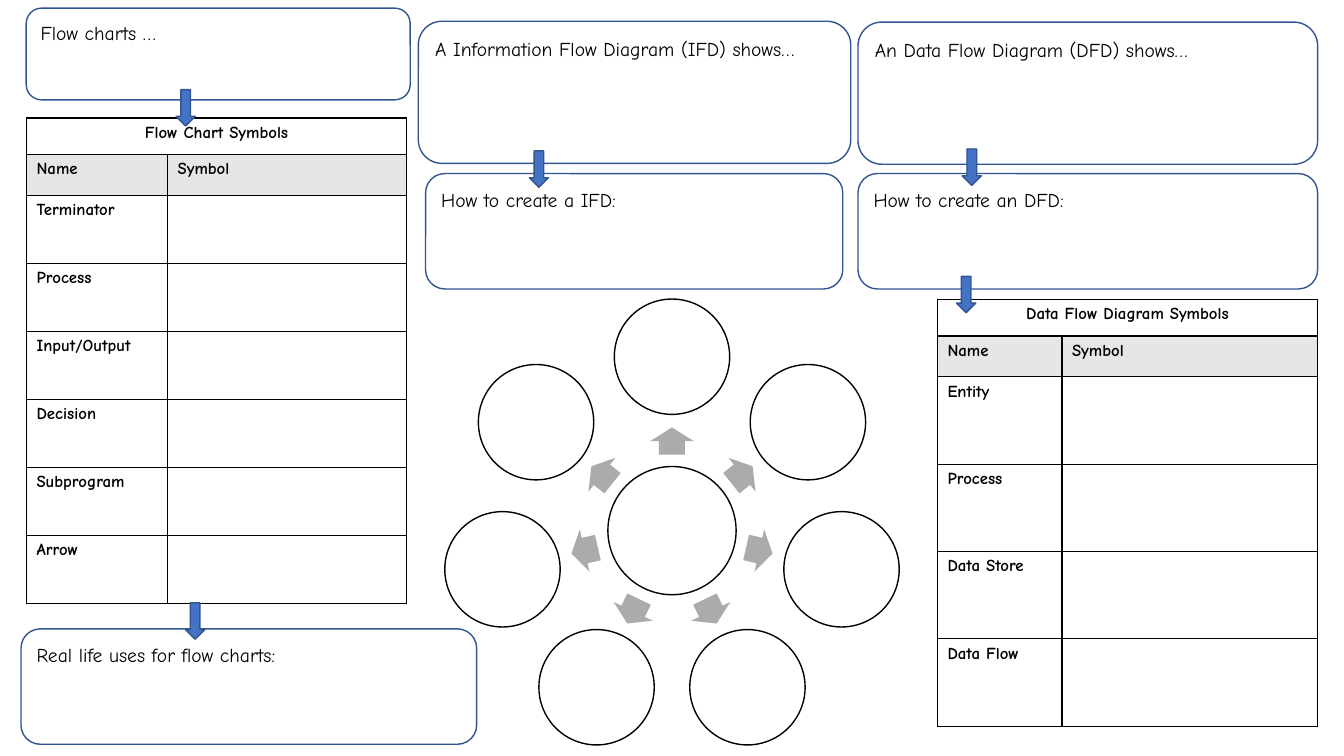
import math

from lxml import etree
from pptx import Presentation
from pptx.dml import color
from pptx.enum import shapes, text
from pptx.oxml import ns
from pptx.util import Pt

COLORS = {
    "ink": "000000", "paper": "FFFFFF", "header": "E7E6E6",
    "blue": "4472C4", "outline": "325491", "spoke": "ABABAB",
}
FONT = "Comic Neue"
SHAPE = shapes.MSO_SHAPE

# left, top, width, height, prompt
PROMPTS = [
    (18.7, 5.8, 274.3, 65.5, "Flow charts …"),
    (298.8, 15.2, 308.9, 101.5, "A Information Flow Diagram (IFD) shows…"),
    (612.9, 15.8, 328.3, 101.5, "An Data Flow Diagram (DFD) shows…"),
    (304, 124, 298, 82.4, "How to create a IFD:"),
    (612.9, 124, 328.3, 82.4, "How to create an DFD:"),
    (15, 449.2, 325.5, 82.4, "Real life uses for flow charts:"),
]
# left, top
DOWN_ARROWS = [(132.5, 430.6), (125.8, 64), (378.1, 107.8), (687.3, 106.4), (683.3, 197.4)]
FLOW_SYMBOLS = ["Terminator", "Process", "Input/Output", "Decision", "Subprogram", "Arrow"]
DATA_SYMBOLS = ["Entity", "Process", "Data Store", "Data Flow"]


def rgb(name):
    return color.RGBColor.from_string(COLORS[name])


def write(tf, words, size, bold=False, align=text.PP_ALIGN.LEFT):
    p = tf.paragraphs[0]
    p.alignment = align
    r = p.add_run()
    r.text = words
    r.font.name = FONT
    r.font.size = Pt(size)
    r.font.bold = bold
    r.font.color.rgb = rgb("ink")


def add_shape(slide, kind, left, top, width, height, fill=None, line=None):
    sp = slide.shapes.add_shape(kind, Pt(left), Pt(top), Pt(width), Pt(height))
    sp.shadow.inherit = False
    if fill:
        sp.fill.solid()
        sp.fill.fore_color.rgb = rgb(fill)
    else:
        sp.fill.background()
    if line:
        sp.line.color.rgb = rgb(line)
        sp.line.width = Pt(1)
    else:
        sp.line.fill.background()
    return sp


def add_prompt(slide, left, top, width, height, words):
    sp = add_shape(slide, SHAPE.ROUNDED_RECTANGLE, left, top, width, height, line="outline")
    tf = sp.text_frame
    tf.word_wrap = True
    tf.vertical_anchor = text.MSO_ANCHOR.TOP
    tf.margin_top = Pt(6)
    write(tf, words, 14)


def add_circle(slide, x, y, diameter):
    add_shape(slide, SHAPE.OVAL, x - diameter / 2, y - diameter / 2,
              diameter, diameter, "paper", "ink")


def add_hub(slide, x, y, count=7):
    """Draw a central circle with arrows pointing to a ring of circles."""
    width, height = 19.4, 31
    add_circle(slide, x, y, 91.6)
    for i in range(count):
        degrees = 360 * i / count - 90
        dx, dy = math.cos(math.radians(degrees)), math.sin(math.radians(degrees))
        sp = add_shape(slide, SHAPE.RIGHT_ARROW, x + 64 * dx - width / 2,
                       y + 64 * dy - height / 2, width, height, "spoke")
        sp.adjustments[0], sp.adjustments[1] = 0.6, 0.5
        sp.rotation = degrees % 360
        add_circle(slide, x + 124.2 * dx, y + 124.2 * dy, 82.4)


def style_cell(cell, fill):
    if fill:
        cell.fill.solid()
        cell.fill.fore_color.rgb = rgb(fill)
    else:
        cell.fill.background()
    tc_pr = cell._tc.get_or_add_tcPr()
    for i, side in enumerate("LRTB"):
        ln = etree.Element(ns.qn(f"a:ln{side}"), w=str(Pt(1)))
        solid = etree.SubElement(ln, ns.qn("a:solidFill"))
        etree.SubElement(solid, ns.qn("a:srgbClr"), val=COLORS["ink"])
        tc_pr.insert(i, ln)


def add_symbol_table(slide, left, top, widths, row_height, title, names):
    rows = [(title, ""), ("Name", "Symbol")] + [(name, "") for name in names]
    heights = [26, 29.2] + [row_height] * len(names)
    frame = slide.shapes.add_table(len(rows), 2, Pt(left), Pt(top),
                                   Pt(sum(widths)), Pt(sum(heights)))
    table = frame.table
    for column, width in zip(table.columns, widths):
        column.width = Pt(width)
    for r, (row, height) in enumerate(zip(rows, heights)):
        table.rows[r].height = Pt(height)
        for c, words in enumerate(row):
            cell = table.cell(r, c)
            style_cell(cell, "header" if r == 1 else None)
            if words:
                align = text.PP_ALIGN.CENTER if r == 0 else text.PP_ALIGN.LEFT
                write(cell.text_frame, words, 12, bold=True, align=align)
    table.cell(0, 0).merge(table.cell(0, 1))


def main():
    prs = Presentation()
    prs.slide_width, prs.slide_height = Pt(960), Pt(540)
    slide = prs.slides.add_slide(prs.slide_layouts[6])
    add_symbol_table(slide, 669.6, 214, (89, 182.6), 62.4,
                     "Data Flow Diagram Symbols", DATA_SYMBOLS)
    add_symbol_table(slide, 18.9, 84.3, (100.8, 170.8), 48.6,
                     "Flow Chart Symbols", FLOW_SYMBOLS)
    for prompt in PROMPTS:
        add_prompt(slide, *prompt)
    add_hub(slide, 480, 379)
    for left, top in DOWN_ARROWS:
        add_shape(slide, SHAPE.DOWN_ARROW, left, top, 13.7, 26, "blue", "outline")
    prs.save("out.pptx")


if __name__ == "__main__":
    main()
